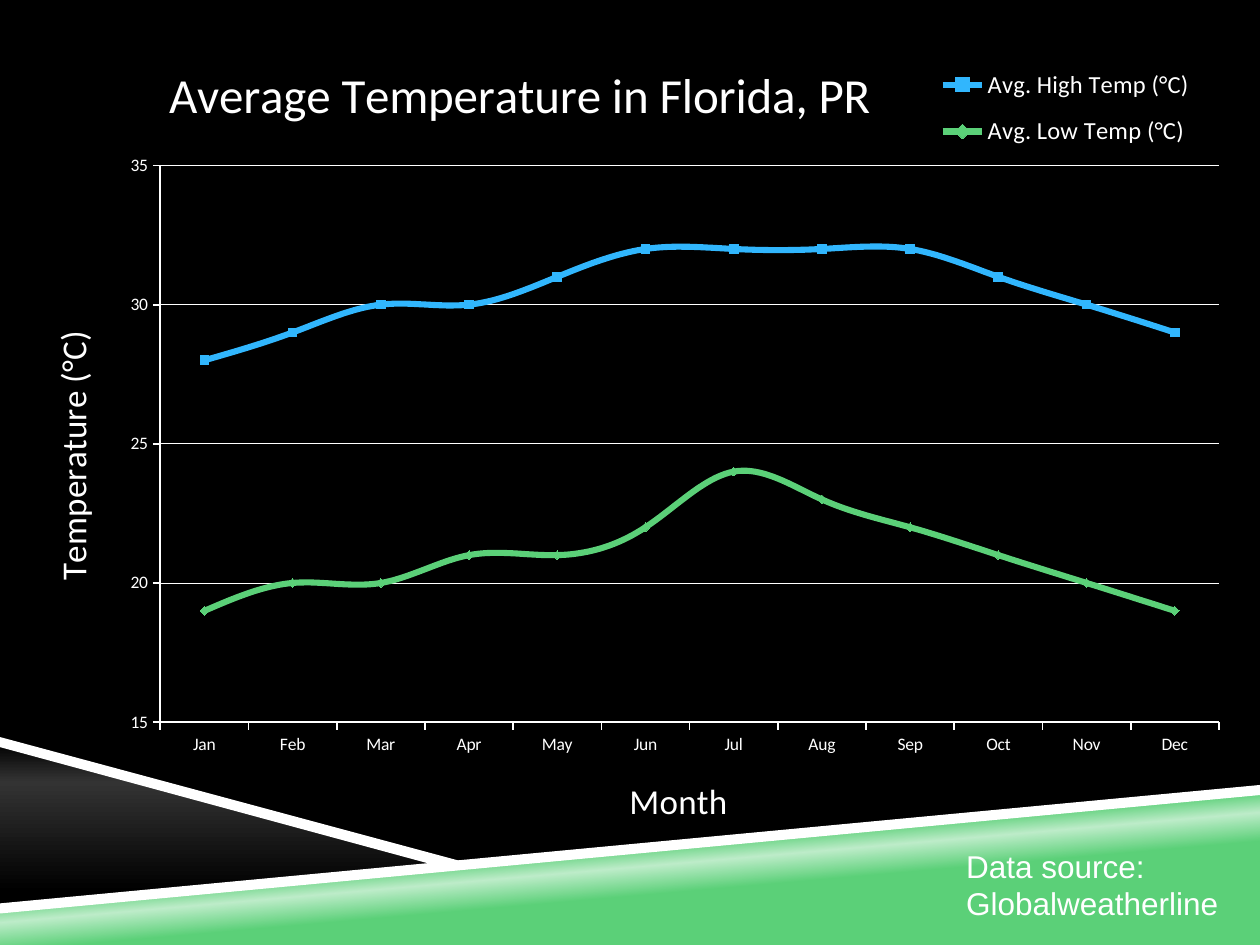
import pptx
import pptx.chart.data
import pptx.dml.color
import pptx.enum.chart
import pptx.enum.text
import pptx.oxml
import pptx.oxml.ns
import pptx.util
from pptx.util import Inches, Pt

# Content
MONTHS = ["Jan", "Feb", "Mar", "Apr", "May", "Jun",
          "Jul", "Aug", "Sep", "Oct", "Nov", "Dec"]
COLORS = {"black": "000000", "charcoal": "333333", "white": "FFFFFF",
          "blue": "31B6FD", "green": "5BD078", "mint": "BDECC9"}
MARKERS = pptx.enum.chart.XL_MARKER_STYLE
SERIES = [
    ("Avg. High Temp (°C)", [28, 29, 30, 30, 31, 32, 32, 32, 32, 31, 30, 29],
     "blue", MARKERS.SQUARE, 5),
    ("Avg. Low Temp (°C)", [19, 20, 20, 21, 21, 22, 24, 23, 22, 21, 20, 19],
     "green", MARKERS.DIAMOND, 5),
]
SOURCE_LINES = ["Data source:", "Globalweatherline"]

# Each band: corner points, gradient stops (position, color), angle
BANDS = [
    ([(0, 7.21), (10, 6.27), (10, 7.5), (0, 7.5)],
     [(39, "green"), (50, "mint"), (58, "green")], 265),
    ([(0, 5.89), (3.59, 6.85), (0, 7.21)],
     [(0, "black"), (24, "charcoal"), (90, "black")], 90),
    ([(10, 6.23), (0, 7.17), (0, 7.25), (10, 6.31)], "white", None),
    ([(0, 5.85), (0, 5.93), (3.5, 6.88), (3.75, 6.86)], "white", None),
]


def rgb(name):
    return pptx.dml.color.RGBColor.from_string(COLORS[name])


def paint(fill, name):
    fill.solid()
    fill.fore_color.rgb = rgb(name)


def paint_gradient(shape, stops, angle):
    shape.fill.gradient()
    gradient = shape._element.spPr.find(pptx.oxml.ns.qn("a:gradFill"))
    stop_xml = "".join(
        f'<a:gs pos="{position * 1000}"><a:srgbClr val="{COLORS[name]}"/></a:gs>'
        for position, name in stops)
    new_gradient = pptx.oxml.parse_xml(
        f'<a:gradFill {pptx.oxml.ns.nsdecls("a")} rotWithShape="1">'
        f'<a:gsLst>{stop_xml}</a:gsLst>'
        f'<a:lin ang="{angle * 60000}" scaled="0"/></a:gradFill>')
    gradient.getparent().replace(gradient, new_gradient)


def add_band(slide, points, fill, angle):
    corners = [(Inches(x), Inches(y)) for x, y in points]
    builder = slide.shapes.build_freeform(*corners[0])
    builder.add_line_segments(corners[1:], close=True)
    shape = builder.convert_to_shape()
    shape.shadow.inherit = False
    shape.line.fill.background()
    if angle is None:
        paint(shape.fill, fill)
    else:
        paint_gradient(shape, fill, angle)


def place(element, x, y, width=None, height=None, inner=False):
    """Put a chart part at fractions of the chart's size."""
    values = [("xMode", "edge"), ("yMode", "edge"), ("x", x), ("y", y)]
    if inner:
        values.insert(0, ("layoutTarget", "inner"))
    if width:
        values += [("w", width), ("h", height)]
    parts = "".join(f'<c:{tag} val="{value}"/>' for tag, value in values)
    layout = pptx.oxml.parse_xml(
        f'<c:layout {pptx.oxml.ns.nsdecls("c")}>'
        f'<c:manualLayout>{parts}</c:manualLayout></c:layout>')
    for old_layout in element.findall(pptx.oxml.ns.qn("c:layout")):
        element.remove(old_layout)
    overlay = element.find(pptx.oxml.ns.qn("c:overlay"))
    if overlay is None:
        element.insert(0, layout)
    else:
        overlay.addprevious(layout)


def style_font(font, size, face="Calibri"):
    font.size = Pt(size)
    font.name = face
    font.bold = False
    font.color.rgb = rgb("white")


def set_title(title, text, size, x, y):
    title.text_frame.text = text
    style_font(title.text_frame.paragraphs[0].runs[0].font, size)
    place(title._element, x, y)


def style_line(line, name, width):
    paint(line.fill, name)
    line.width = Pt(width)


def add_temperature_chart(slide):
    data = pptx.chart.data.CategoryChartData()
    data.categories = MONTHS
    for name, values, *_ in SERIES:
        data.add_series(name, values)
    chart = slide.shapes.add_chart(
        pptx.enum.chart.XL_CHART_TYPE.LINE_MARKERS,
        Inches(0.33), Inches(0.42), Inches(9.42), Inches(6.25), data).chart
    style_font(chart.font, 10)
    place(chart._chartSpace.chart.plotArea, 0.1, 0.143, 0.892, 0.707, inner=True)

    # Titles and legend
    chart.has_title = True
    set_title(chart.chart_title, "Average Temperature in Florida, PR", 28, 0.1, 0)
    set_title(chart.category_axis.axis_title, "Month", 20, 0.49, 0.91)
    set_title(chart.value_axis.axis_title, "Temperature (°C)", 20, 0, 0.345)
    chart.has_legend = True
    chart.legend.position = pptx.enum.chart.XL_LEGEND_POSITION.RIGHT
    chart.legend.include_in_layout = False
    style_font(chart.legend.font, 14)
    place(chart.legend._element, 0.743, 0, 0.24, 0.14)

    # Axes
    for axis in (chart.category_axis, chart.value_axis):
        axis.major_tick_mark = pptx.enum.chart.XL_TICK_MARK.OUTSIDE
        style_line(axis.format.line, "white", 1)
        style_font(axis.tick_labels.font, 10)
    value_axis = chart.value_axis
    value_axis.minimum_scale = 15
    value_axis.maximum_scale = 35
    value_axis.major_unit = 5
    style_line(value_axis.major_gridlines.format.line, "white", 0.5)

    # Series
    for series, (_, _, color, marker, size) in zip(chart.plots[0].series, SERIES):
        series.smooth = True
        style_line(series.format.line, color, 3.5)
        series.marker.style = marker
        series.marker.size = size
        paint(series.marker.format.fill, color)
        style_line(series.marker.format.line, color, 0.75)


def add_source(slide):
    box = slide.shapes.add_textbox(Inches(7.57), Inches(6.67), Inches(2.43), Inches(0.71))
    frame = box.text_frame
    frame.word_wrap = False
    frame.auto_size = pptx.enum.text.MSO_AUTO_SIZE.SHAPE_TO_FIT_TEXT
    frame.text = "\n".join(SOURCE_LINES)
    for paragraph in frame.paragraphs:
        style_font(paragraph.runs[0].font, 18, "Arial")


def main():
    presentation = pptx.Presentation()
    presentation.slide_width = Inches(10)
    presentation.slide_height = Inches(7.5)
    slide = presentation.slides.add_slide(presentation.slide_layouts[6])
    paint(slide.background.fill, "black")
    for band in BANDS:
        add_band(slide, *band)
    add_source(slide)
    add_temperature_chart(slide)
    presentation.save("out.pptx")


if __name__ == "__main__":
    main()
